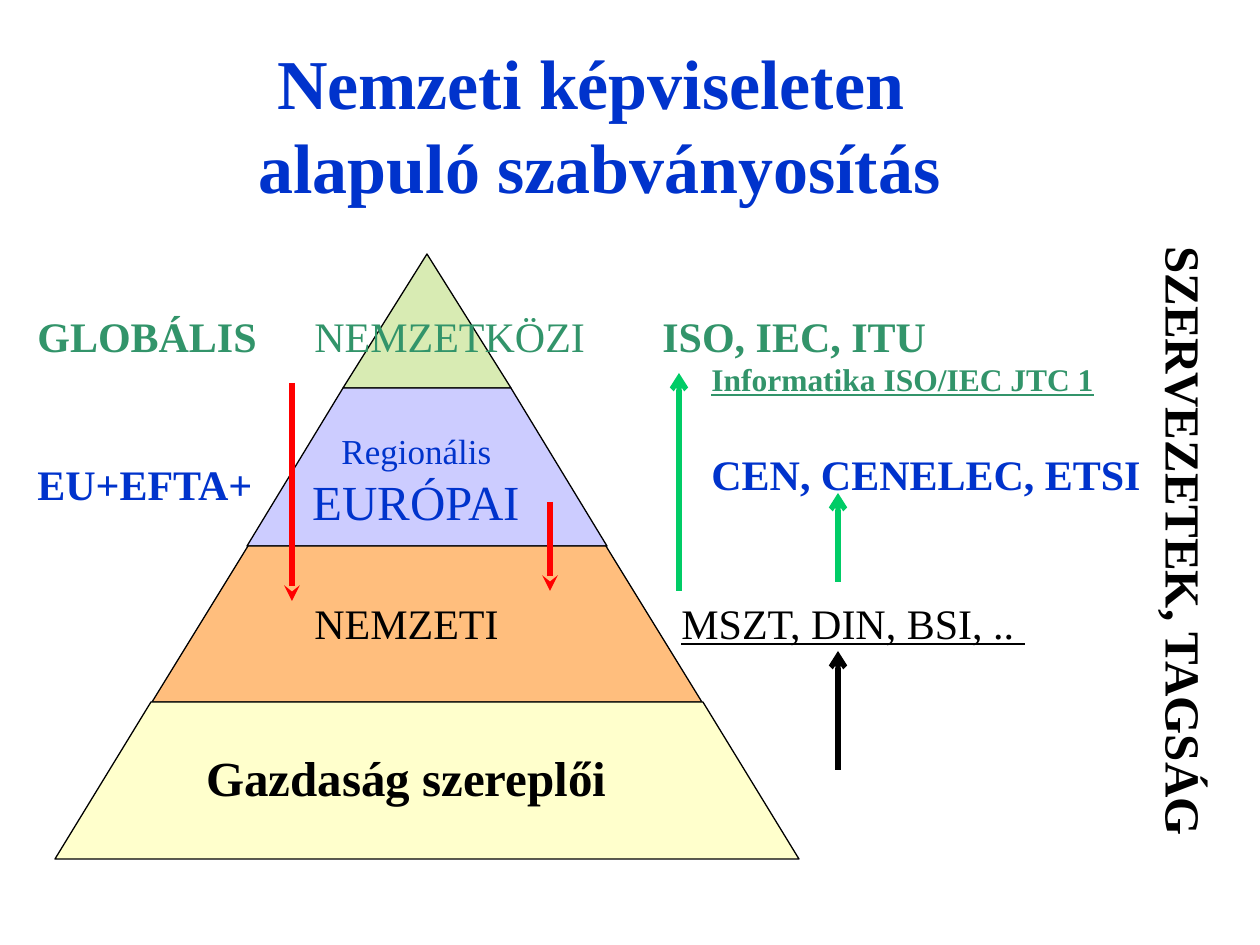
from lxml.etree import SubElement
from pptx import Presentation
from pptx.dml.color import RGBColor
from pptx.enum.shapes import MSO_CONNECTOR
from pptx.enum.text import MSO_ANCHOR, MSO_AUTO_SIZE, PP_ALIGN
from pptx.oxml.ns import qn
from pptx.util import Emu, Pt

SCALE = 914400 / 126  # EMU in one px
FONT = "Times New Roman"

BLACK = RGBColor(0x00, 0x00, 0x00)
BLUE = RGBColor(0x00, 0x33, 0xCC)
TEAL = RGBColor(0x32, 0x94, 0x6A)
GREEN = RGBColor(0x00, 0xCC, 0x66)
RED = RGBColor(0xFF, 0x00, 0x00)
LIME = RGBColor(0xD8, 0xEB, 0xB3)
LAVENDER = RGBColor(0xCC, 0xCC, 0xFF)
ORANGE = RGBColor(0xFF, 0xBE, 0x7D)
CREAM = RGBColor(0xFF, 0xFF, 0xCC)


def px(length):
    return Emu(round(length * SCALE))


class SlideBuilder:
    def __init__(self, slide):
        self.slide = slide

    def style(self, paragraph, size, color, bold=False, underline=False, align=PP_ALIGN.LEFT):
        paragraph.alignment = align
        font = paragraph.font
        font.name, font.size, font.bold = FONT, Pt(size), bold
        font.underline = underline
        font.color.rgb = color

    def title(self, text, box):
        shape = self.slide.shapes.title
        shape.left, shape.top, shape.width, shape.height = map(px, box)
        frame = shape.text_frame
        frame.auto_size = MSO_AUTO_SIZE.NONE
        frame.vertical_anchor = MSO_ANCHOR.MIDDLE
        paragraph = frame.paragraphs[0]
        paragraph.text = text
        self.style(paragraph, 40, BLUE, bold=True, align=PP_ALIGN.CENTER)

    def label(self, text, box, size, color, vertical=False, **look):
        frame = self.slide.shapes.add_textbox(*map(px, box)).text_frame
        frame.word_wrap = True
        frame.auto_size = MSO_AUTO_SIZE.SHAPE_TO_FIT_TEXT
        if vertical:
            frame._txBody.bodyPr.set("vert", "eaVert")
        paragraph = frame.paragraphs[0]
        paragraph.text = text
        self.style(paragraph, size, color, **look)
        return paragraph

    def pyramid(self, center, tiers):
        group = self.slide.shapes.add_group_shape()
        for color, top, bottom, top_half, bottom_half in tiers:
            builder = group.shapes.build_freeform(center - top_half, top, SCALE)
            corners = [(center + bottom_half, bottom), (center - bottom_half, bottom)]
            if top_half:
                corners.insert(0, (center + top_half, top))
            builder.add_line_segments(corners, close=True)
            tier = builder.convert_to_shape()
            tier.shadow.inherit = False
            tier.fill.solid()
            tier.fill.fore_color.rgb = color
            tier.line.color.rgb = BLACK
            tier.line.width = Pt(0.75)

    def arrow(self, x, start, end, color, head):
        connector = self.slide.shapes.add_connector(
            MSO_CONNECTOR.STRAIGHT, px(x), px(start), px(x), px(end))
        connector.line.color.rgb = color
        connector.line.width = Pt(3)
        properties = connector._element.spPr
        SubElement(properties.find(qn("a:ln")), qn("a:tailEnd"), type=head)
        SubElement(properties, qn("a:effectLst"))


def main():
    presentation = Presentation()
    presentation.slide_width, presentation.slide_height = px(1260), px(945)
    slide = presentation.slides.add_slide(presentation.slide_layouts[5])
    builder = SlideBuilder(slide)

    builder.title("Nemzeti képviseleten \valapuló szabványosítás", (64, 45, 1071, 158))

    # Pyramid tiers: colour, top, bottom, half width at top and at bottom
    builder.pyramid(427, [
        (LIME, 254, 388, 0, 84),
        (LAVENDER, 388, 546, 84, 180),
        (ORANGE, 546, 702, 179, 275),
        (CREAM, 702, 859, 276, 372),
    ])

    # Level names on the pyramid
    builder.label("Gazdaság szereplői", (194, 741, 496, 72), 28, BLACK, bold=True)
    builder.label("NEMZETI", (302, 591, 258, 63), 24, BLACK)
    regional = builder.label("Regionális\vEURÓPAI", (273, 423, 287, 115), 20, BLUE,
                             align=PP_ALIGN.CENTER)
    regional.runs[1].font.size = Pt(28)
    builder.label("NEMZETKÖZI", (302, 304, 297, 63), 24, TEAL)

    # Organisations on the right
    builder.label("ISO, IEC, ITU", (650, 304, 328, 63), 24, TEAL, bold=True)
    builder.label("CEN, CENELEC, ETSI", (699, 442, 456, 63), 24, BLUE, bold=True)
    builder.label("MSZT, DIN, BSI, .. ", (669, 591, 377, 63), 24, BLACK, underline=True)
    builder.label("SZERVEZETEK, TAGSÁG", (1137, 234, 84, 615), 28, BLACK,
                  vertical=True, bold=True, align=PP_ALIGN.CENTER)

    # Territories on the left
    builder.label("GLOBÁLIS", (25, 304, 248, 63), 24, TEAL, bold=True)
    builder.label("EU+EFTA+", (25, 452, 248, 63), 24, BLUE, bold=True)

    # Upward membership and downward adoption arrows
    for x, start, end, color, head in [
        (679, 591, 373, GREEN, "arrow"),
        (838, 582, 493, GREEN, "arrow"),
        (838, 770, 651, BLACK, "arrow"),
        (292, 383, 601, RED, "stealth"),
        (550, 502, 591, RED, "stealth"),
    ]:
        builder.arrow(x, start, end, color, head)

    builder.label("Informatika ISO/IEC JTC 1", (699, 354, 417, 50), 18, TEAL,
                  bold=True, underline=True)

    presentation.save("out.pptx")


if __name__ == "__main__":
    main()
